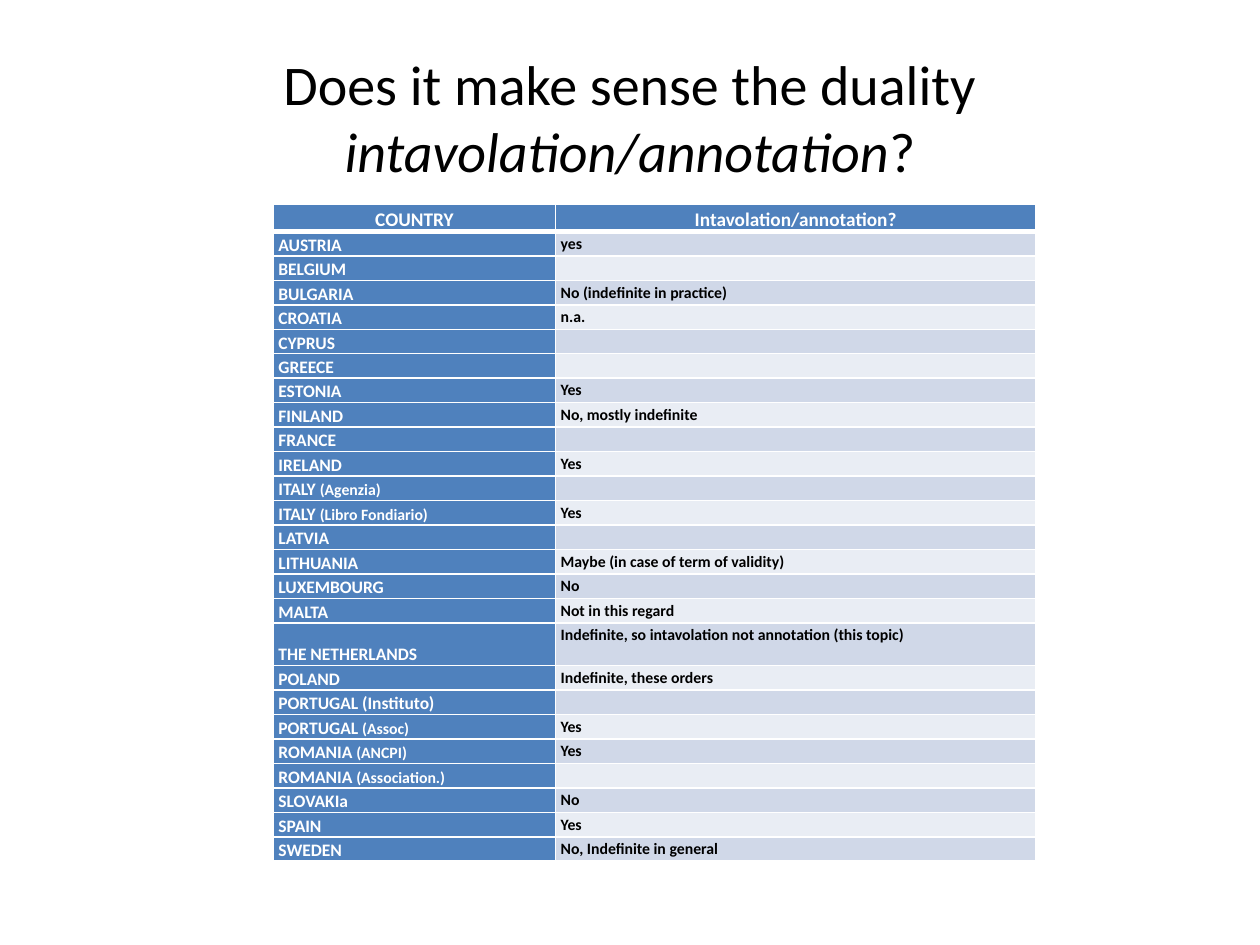
from typing import NamedTuple

from lxml import etree
from pptx import Presentation
from pptx.dml.color import RGBColor
from pptx.enum.text import MSO_ANCHOR, MSO_AUTO_SIZE, PP_ALIGN
from pptx.oxml.ns import qn
from pptx.util import Inches, Pt

CENTER, LEFT = PP_ALIGN.CENTER, PP_ALIGN.LEFT
MIDDLE, TOP, BOTTOM = MSO_ANCHOR.MIDDLE, MSO_ANCHOR.TOP, MSO_ANCHOR.BOTTOM
NO_AUTOFIT = MSO_AUTO_SIZE.NONE

COLORS = {
    "header": "4F81BD",
    "odd": "D0D8E8",
    "even": "E9EDF4",
    "light": "FFFFFF",
    "dark": "000000",
}
FONT = "Calibri"
TITLE_LAYOUT = 5
ROW_HEIGHT, HEADER_HEIGHT, TALL_HEIGHT = 0.19, 0.21, 0.34
THIN, THICK = 1, 3


class Answer(NamedTuple):
    country: str
    reply: str = ""
    note: str = ""
    height: float = ROW_HEIGHT


class CellStyle(NamedTuple):
    fill: str
    color: str
    size: int
    align: PP_ALIGN
    anchor: MSO_ANCHOR


ANSWERS = [
    Answer("AUSTRIA", "yes"),
    Answer("BELGIUM"),
    Answer("BULGARIA", "No (indefinite in practice)"),
    Answer("CROATIA", "n.a."),
    Answer("CYPRUS"),
    Answer("GREECE"),
    Answer("ESTONIA", "Yes"),
    Answer("FINLAND", "No, mostly indefinite"),
    Answer("FRANCE"),
    Answer("IRELAND", "Yes"),
    Answer("ITALY ", note="(Agenzia)"),
    Answer("ITALY ", "Yes", "(Libro Fondiario)"),
    Answer("LATVIA"),
    Answer("LITHUANIA", "Maybe (in case of term of validity)"),
    Answer("LUXEMBOURG", "No"),
    Answer("MALTA", "Not in this regard"),
    Answer("THE NETHERLANDS", "Indefinite, so intavolation not annotation (this topic)",
           height=TALL_HEIGHT),
    Answer("POLAND", "Indefinite, these orders"),
    Answer("PORTUGAL (Instituto)"),
    Answer("PORTUGAL ", "Yes", "(Assoc)"),
    Answer("ROMANIA ", "Yes", "(ANCPI)"),
    Answer("ROMANIA ", note="(Association.)"),
    Answer("SLOVAKIa", "No"),
    Answer("SPAIN", "Yes"),
    Answer("SWEDEN", "No, Indefinite in general"),
]

HEADER_STYLE = CellStyle("header", "light", 11, CENTER, MIDDLE)
COUNTRY_STYLE = CellStyle("header", "light", 10, LEFT, BOTTOM)
REPLY_STYLES = [CellStyle(band, "dark", 9, LEFT, TOP) for band in ("odd", "even")]


def add_span(para, text: str, color: str, **formats) -> None:
    span = para.add_run()
    span.text = text
    span.font.color.rgb = RGBColor.from_string(COLORS[color])
    for name, value in {"name": FONT, **formats}.items():
        setattr(span.font, name, value)


def add_borders(cell, top: int, bottom: int) -> None:
    properties = cell._tc.get_or_add_tcPr()
    for side, width in {"L": THIN, "R": THIN, "T": top, "B": bottom}.items():
        line = etree.SubElement(properties, qn(f"a:ln{side}"), w=str(Pt(width)))
        fill = etree.SubElement(line, qn("a:solidFill"))
        etree.SubElement(fill, qn("a:srgbClr"), val=COLORS["light"])


def fill_cell(cell, style: CellStyle, text: str, note: str = "",
              top: int = THIN, bottom: int = THIN) -> None:
    add_borders(cell, top, bottom)
    cell.fill.solid()
    cell.fill.fore_color.rgb = RGBColor.from_string(COLORS[style.fill])
    formats = {
        "margin_left": Inches(0.04),
        "margin_right": Inches(0.04),
        "margin_top": 0,
        "margin_bottom": 0,
        "vertical_anchor": style.anchor,
    }
    for name, value in formats.items():
        setattr(cell, name, value)
    para = cell.text_frame.paragraphs[0]
    para.alignment = style.align
    para.line_spacing = 1.15
    if text:
        add_span(para, text, style.color, size=Pt(style.size), bold=True)
    else:
        # An empty cell must keep the small size, or its row grows
        etree.SubElement(para._p, qn("a:endParaRPr"), sz=str(style.size * 100))
    if note:
        add_span(para, note, style.color, size=Pt(9), bold=True)


def add_title(page) -> None:
    title = page.shapes.title
    title.left, title.top = Inches(0.5), Inches(0.3)
    title.width, title.height = Inches(9), Inches(1.25)
    frame = title.text_frame
    frame.auto_size = NO_AUTOFIT
    frame.vertical_anchor = MIDDLE
    para = frame.paragraphs[0]
    para.alignment = CENTER
    for text, italic in (("Does it make sense the duality ", False),
                         ("intavolation/annotation", True),
                         ("?", False)):
        add_span(para, text, "dark", size=Pt(32), italic=italic)


def add_answer_table(page) -> None:
    heights = [HEADER_HEIGHT] + [answer.height for answer in ANSWERS]
    table = page.shapes.add_table(
        len(heights), 2, Inches(2.17), Inches(1.62), Inches(6.05), Inches(sum(heights))
    ).table
    for column, width in zip(table.columns, (2.24, 3.81)):
        column.width = Inches(width)
    for row, height in zip(table.rows, heights):
        row.height = Inches(height)

    # Header row
    for index, heading in enumerate(("COUNTRY", "Intavolation/annotation?")):
        fill_cell(table.cell(0, index), HEADER_STYLE, heading, bottom=THICK)

    # One row per country, with alternating bands
    for index, answer in enumerate(ANSWERS):
        top = THIN if index else THICK
        fill_cell(table.cell(index + 1, 0), COUNTRY_STYLE, answer.country, answer.note, top)
        fill_cell(table.cell(index + 1, 1), REPLY_STYLES[index % 2], answer.reply, top=top)


def main() -> None:
    deck = Presentation()
    deck.slide_width, deck.slide_height = Inches(10), Inches(7.5)
    page = deck.slides.add_slide(deck.slide_layouts[TITLE_LAYOUT])
    add_title(page)
    add_answer_table(page)
    deck.save("out.pptx")


if __name__ == "__main__":
    main()
